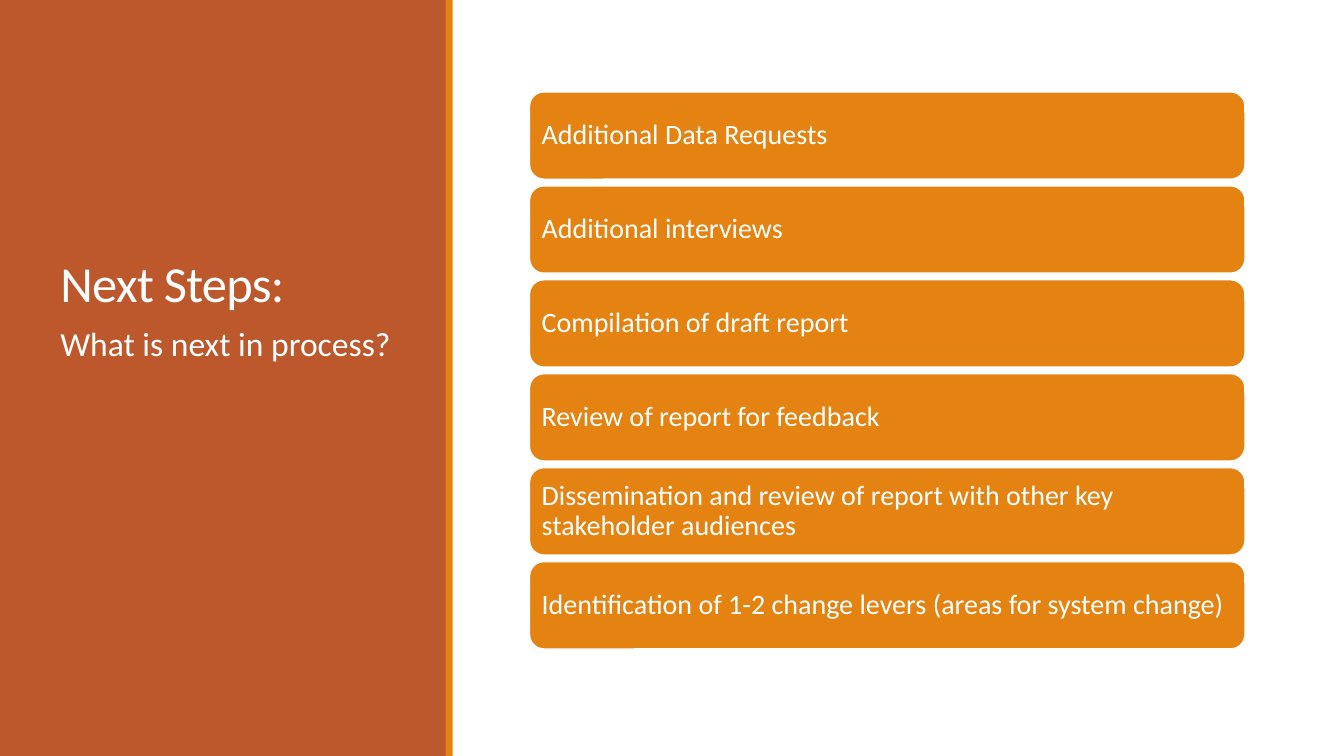
from pptx import Presentation
from pptx.dml.color import RGBColor
from pptx.enum.shapes import MSO_SHAPE
from pptx.enum.text import MSO_ANCHOR, PP_ALIGN
from pptx.util import Inches, Pt

COLORS = {"panel": "BD582C", "accent": "E48312", "white": "FFFFFF"}
STEPS = [
    "Additional Data Requests",
    "Additional interviews",
    "Compilation of draft report",
    "Review of report for feedback",
    "Dissemination and review of report with other key stakeholder audiences",
    "Identification of 1-2 change levers (areas for system change)",
]
STEP_LEFT, STEP_TOP = 5.25, 0.91
STEP_WIDTH, STEP_HEIGHT = 7.1, 0.87
STEP_PITCH = 0.932
STEP_INSET = Inches(0.08)

deck = Presentation()
deck.slide_width = Inches(13.33)
deck.slide_height = Inches(7.5)
page = deck.slides.add_slide(deck.slide_layouts[6])


def add_block(kind, left, top, width, height, color):
    block = page.shapes.add_shape(
        kind, Inches(left), Inches(top), Inches(width), Inches(height)
    )
    block.shadow.inherit = False
    block.fill.solid()
    block.fill.fore_color.rgb = RGBColor.from_string(COLORS[color])
    block.line.fill.background()
    return block


def write_text(box, text, size, spacing, anchor):
    frame = box.text_frame
    frame.word_wrap = True
    frame.vertical_anchor = anchor
    para = frame.paragraphs[0]
    para.text = text
    para.alignment = PP_ALIGN.LEFT
    para.line_spacing = spacing
    para.font.name = "Calibri"
    para.font.size = Pt(size)
    para.font.color.rgb = RGBColor.from_string(COLORS["white"])
    return para


add_block(MSO_SHAPE.RECTANGLE, 0, 0, 4.43, 7.5, "panel")
add_block(MSO_SHAPE.RECTANGLE, 4.42, 0, 0.07, 7.5, "accent")

title = page.shapes.add_textbox(Inches(0.5), Inches(0.65), Inches(3.5), Inches(2.5))
heading = write_text(title, "Next Steps:", 36, 0.85, MSO_ANCHOR.BOTTOM)
heading.runs[0].font._element.set("spc", "-50")

for row, step in enumerate(STEPS):
    top = STEP_TOP + row * STEP_PITCH
    bar = add_block(
        MSO_SHAPE.ROUNDED_RECTANGLE, STEP_LEFT, top, STEP_WIDTH, STEP_HEIGHT, "accent"
    )
    bar.line.color.rgb = RGBColor.from_string(COLORS["white"])
    bar.line.width = Pt(1.25)
    frame = bar.text_frame
    frame.margin_left = frame.margin_right = STEP_INSET
    frame.margin_top = frame.margin_bottom = STEP_INSET
    write_text(bar, step, 20, 0.9, MSO_ANCHOR.MIDDLE)

subtitle = page.shapes.add_textbox(Inches(0.5), Inches(3.2), Inches(3.5), Inches(3.7))
write_text(subtitle, "What is next in process?", 24, 0.9, MSO_ANCHOR.TOP)

deck.save("out.pptx")
